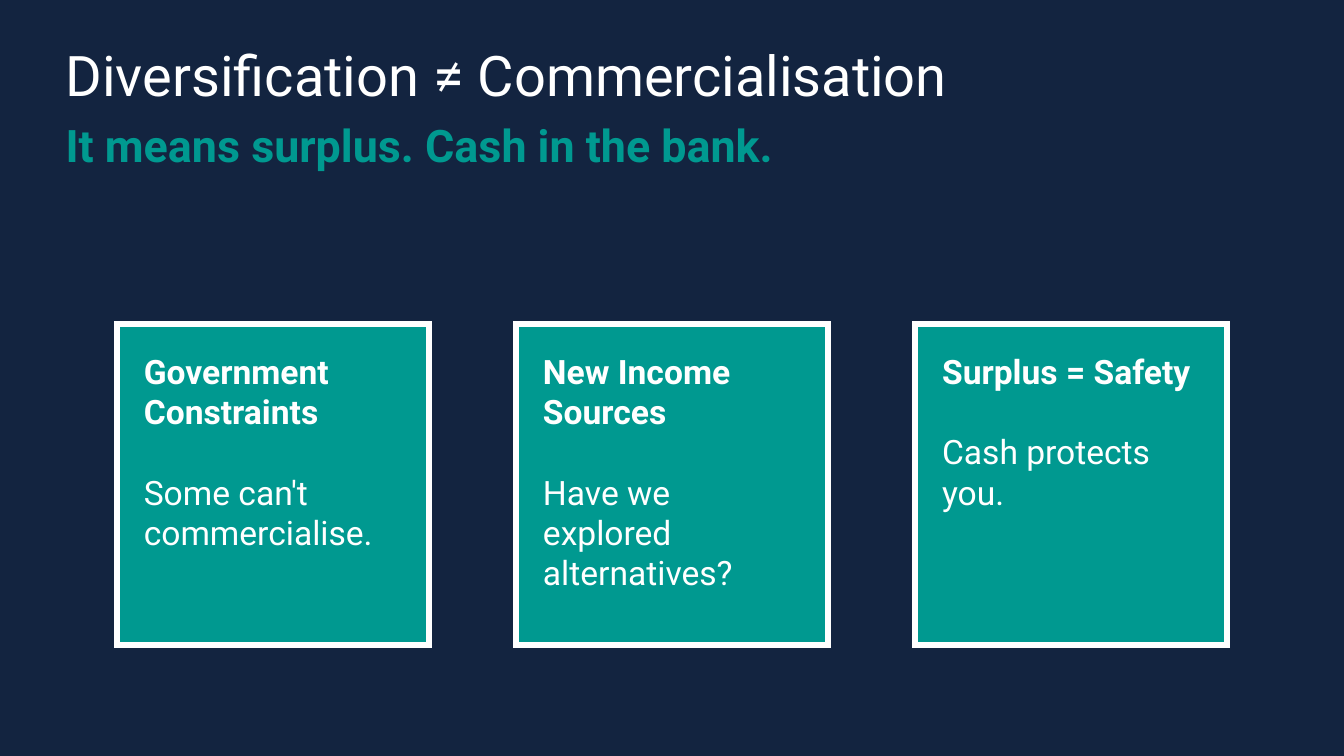
from lxml import etree
from pptx import Presentation
from pptx.dml.color import RGBColor
from pptx.enum.shapes import MSO_SHAPE
from pptx.enum.text import MSO_ANCHOR, PP_ALIGN
from pptx.oxml.ns import qn
from pptx.util import Inches, Pt

RECT = MSO_SHAPE.RECTANGLE
TOP = MSO_ANCHOR.TOP
LEFT = PP_ALIGN.LEFT

# Content
TITLE = "Diversification ≠ Commercialisation"
SUBTITLE = "It means surplus. Cash in the bank."
CARDS = [
    ("Government Constraints", "Some can't commercialise."),
    ("New Income Sources", "Have we explored alternatives?"),
    ("Surplus = Safety", "Cash protects you."),
]

# Style and layout, in inches
COLORS = {"navy": "132440", "teal": "009990", "white": "FFFFFF"}
FONT = "Roboto"
WIDTH = 10
HEIGHT = WIDTH * 9 / 16
HEAD_LEFT, HEAD_TOP, HEAD_H = 0.39, 0.25, 0.58
CARD_TOP, CARD_W, CARD_H, CARD_GAP = 2.41, 2.32, 2.39, 0.65
CARD_PAD = 0.2
CARD_LEFT = (WIDTH - len(CARDS) * CARD_W - (len(CARDS) - 1) * CARD_GAP) / 2


def rgb(name):
    return RGBColor.from_string(COLORS[name])


def write(p, text, size, color, bold=False):
    p.text = text
    p.alignment = LEFT
    p.font.name = FONT
    p.font.size = Pt(size)
    p.font.bold = bold
    p.font.color.rgb = rgb(color)


def add_rect(slide, x, y, w, h, fill):
    sp = slide.shapes.add_shape(RECT, Inches(x), Inches(y), Inches(w), Inches(h))
    sp.shadow.inherit = False
    sp.fill.solid()
    sp.fill.fore_color.rgb = rgb(fill)
    sp.line.fill.background()
    return sp


def add_heading(slide, row, width, wrap, *style):
    box = slide.shapes.add_textbox(Inches(HEAD_LEFT), Inches(HEAD_TOP + row * HEAD_H),
                                   Inches(width), Inches(HEAD_H))
    tf = box.text_frame
    tf.word_wrap = wrap
    write(tf.paragraphs[0], *style)


def add_card(slide, column, heading, body):
    x = CARD_LEFT + column * (CARD_W + CARD_GAP)
    sp = add_rect(slide, x, CARD_TOP, CARD_W, CARD_H, "teal")
    sp.line.color.rgb = rgb("white")
    sp.line.width = Pt(3)
    # Square corners on the border
    ln = sp.element.spPr.find(qn("a:ln"))
    etree.SubElement(ln, qn("a:miter"), lim="800000")
    tf = sp.text_frame
    tf.word_wrap = True
    tf.vertical_anchor = TOP
    tf.margin_left = tf.margin_right = Inches(CARD_PAD)
    tf.margin_top = tf.margin_bottom = Inches(CARD_PAD)
    write(tf.paragraphs[0], heading, 18, "white", True)
    p = tf.add_paragraph()
    write(p, body, 18, "white")
    p.space_before = Pt(21.5)  # one line of text


prs = Presentation()
prs.slide_width, prs.slide_height = Inches(WIDTH), Inches(HEIGHT)
s = prs.slides.add_slide(prs.slide_layouts[6])

# Backdrop and headings
add_rect(s, 0, 0, WIDTH, HEIGHT, "navy")
add_heading(s, 1, 5.78, False, SUBTITLE, 24, "teal", True)
add_heading(s, 0, 7.32, True, TITLE, 30, "white")

# Cards
for column, (heading, body) in enumerate(CARDS):
    add_card(s, column, heading, body)

prs.save("out.pptx")
